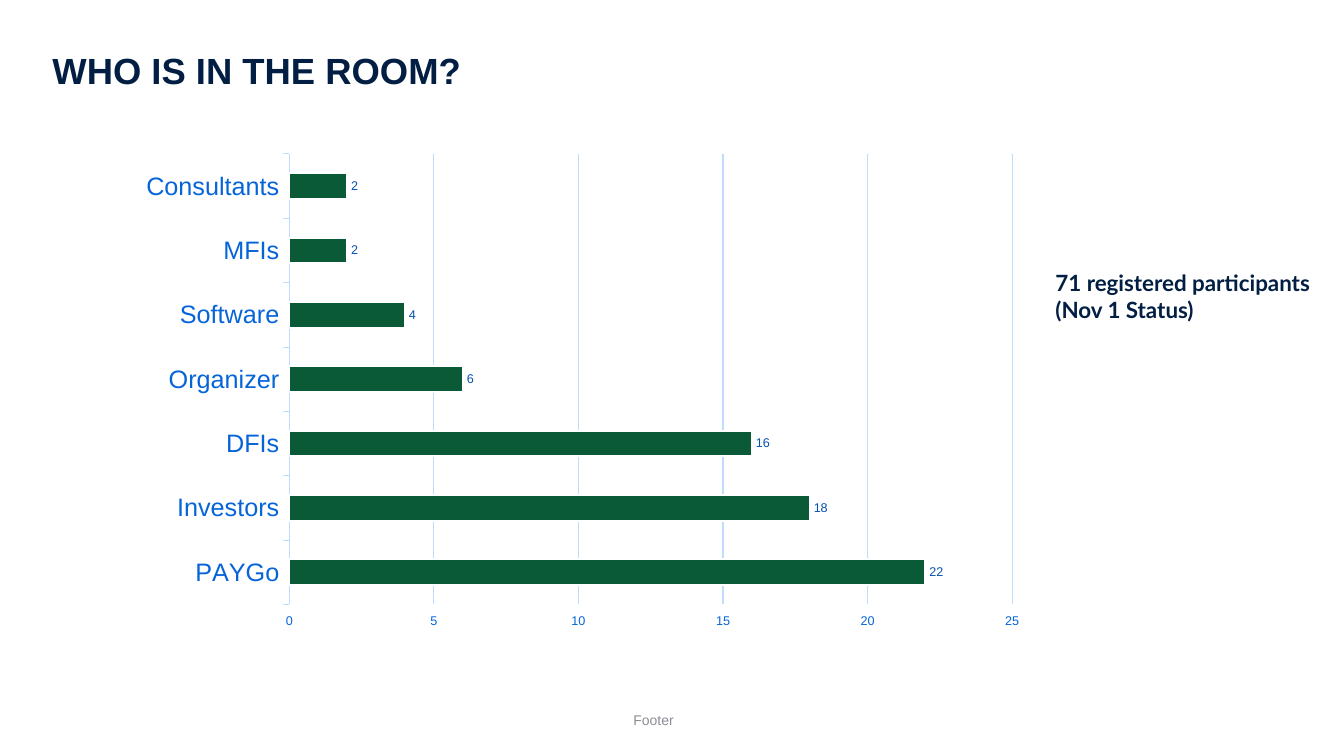
import pptx
import pptx.chart.data
import pptx.dml.color
import pptx.enum.chart
import pptx.enum.text
import pptx.util

PX = 9144
NAVY = pptx.dml.color.RGBColor(0x02, 0x1F, 0x43)
BLUE = pptx.dml.color.RGBColor(0x06, 0x64, 0xD9)
LABEL_BLUE = pptx.dml.color.RGBColor(0x05, 0x51, 0xAE)
PALE_BLUE = pptx.dml.color.RGBColor(0xBF, 0xDB, 0xFD)
GREEN = pptx.dml.color.RGBColor(0x0B, 0x5A, 0x37)
GREY = pptx.dml.color.RGBColor(0x8C, 0x8D, 0x94)
WHITE = pptx.dml.color.RGBColor(0xFF, 0xFF, 0xFF)

PARTICIPANTS = {
    "PAYGo": 22,
    "Investors": 18,
    "DFIs": 16,
    "Organizer": 6,
    "Software": 4,
    "MFIs": 2,
    "Consultants": 2,
}


def set_all(target, values):
    for name, value in values.items():
        setattr(target, name, value)


def style_font(font, size, color, name="Arial", bold=False):
    set_all(font, {"size": pptx.util.Pt(size), "name": name, "bold": bold})
    font.color.rgb = color


def style_line(line, color, width):
    line.color.rgb = color
    line.width = pptx.util.Pt(width)


def scaled(box):
    return [length * PX for length in box]


def write_lines(shape, lines, frame_format, align, **font_format):
    frame = shape.text_frame
    set_all(frame, {"word_wrap": True, **frame_format})
    for index, line in enumerate(lines):
        para = frame.add_paragraph() if index else frame.paragraphs[0]
        para.alignment = align
        span = para.add_run()
        span.text = line
        style_font(span.font, **font_format)


def add_title(page, box):
    title = page.shapes.title
    set_all(title, dict(zip(("left", "top", "width", "height"), scaled(box))))
    frame_format = {
        "vertical_anchor": pptx.enum.text.MSO_ANCHOR.MIDDLE,
        "margin_left": 0, "margin_top": 0, "margin_right": 0, "margin_bottom": 0,
    }
    write_lines(title, ["WHO IS IN THE ROOM?"], frame_format,
                pptx.enum.text.PP_ALIGN.LEFT, size=26, color=NAVY, bold=True)


def add_footer(page, box):
    footer = page.shapes.add_textbox(*scaled(box))
    frame_format = {
        "vertical_anchor": pptx.enum.text.MSO_ANCHOR.MIDDLE,
        "margin_left": 0, "margin_top": 0, "margin_right": 10 * PX, "margin_bottom": 0,
    }
    write_lines(footer, ["Footer"], frame_format,
                pptx.enum.text.PP_ALIGN.RIGHT, size=10, color=GREY)


def add_summary(page, box):
    summary = page.shapes.add_textbox(*scaled(box))
    write_lines(summary, ["71 registered participants", "(Nov 1 Status)"],
                {"vertical_anchor": pptx.enum.text.MSO_ANCHOR.TOP},
                pptx.enum.text.PP_ALIGN.LEFT,
                size=16, color=NAVY, name="Lato", bold=True)


def add_participant_chart(page, box):
    data = pptx.chart.data.CategoryChartData()
    data.categories = list(PARTICIPANTS)
    data.add_series("Series 1", list(PARTICIPANTS.values()))
    chart = page.shapes.add_chart(
        pptx.enum.chart.XL_CHART_TYPE.BAR_CLUSTERED, *scaled(box), data).chart
    set_all(chart, {"has_legend": False, "has_title": False})
    style_font(chart.font, 10, NAVY)

    outside = pptx.enum.chart.XL_TICK_MARK.OUTSIDE
    categories = chart.category_axis
    set_all(categories, {"major_tick_mark": outside, "has_major_gridlines": False})
    style_font(categories.tick_labels.font, 18, BLUE)
    style_line(categories.format.line, PALE_BLUE, 0.75)

    values = chart.value_axis
    set_all(values, {
        "major_tick_mark": outside, "has_major_gridlines": True,
        "minimum_scale": 0, "maximum_scale": 25, "major_unit": 5,
    })
    style_font(values.tick_labels.font, 9, BLUE)
    values.format.line.fill.background()
    style_line(values.major_gridlines.format.line, PALE_BLUE, 0.75)

    plot = chart.plots[0]
    set_all(plot, {"gap_width": 150, "vary_by_categories": False, "has_data_labels": True})
    set_all(plot.data_labels, {
        "show_value": True,
        "position": pptx.enum.chart.XL_LABEL_POSITION.OUTSIDE_END,
    })
    style_font(plot.data_labels.font, 9, LABEL_BLUE)
    bars = plot.series[0].format
    bars.fill.solid()
    bars.fill.fore_color.rgb = GREEN
    style_line(bars.line, WHITE, 1.5)


def main():
    deck = pptx.Presentation()
    set_all(deck, {"slide_width": 1333 * PX, "slide_height": 750 * PX})
    page = deck.slides.add_slide(deck.slide_layouts.get_by_name("Title Only"))
    add_title(page, (52, 33, 1231, 73))
    add_footer(page, (146, 695, 532, 39))
    add_summary(page, (1037, 262, 273, 333))
    add_participant_chart(page, (127, 143, 902, 491))
    deck.save("out.pptx")


if __name__ == "__main__":
    main()
